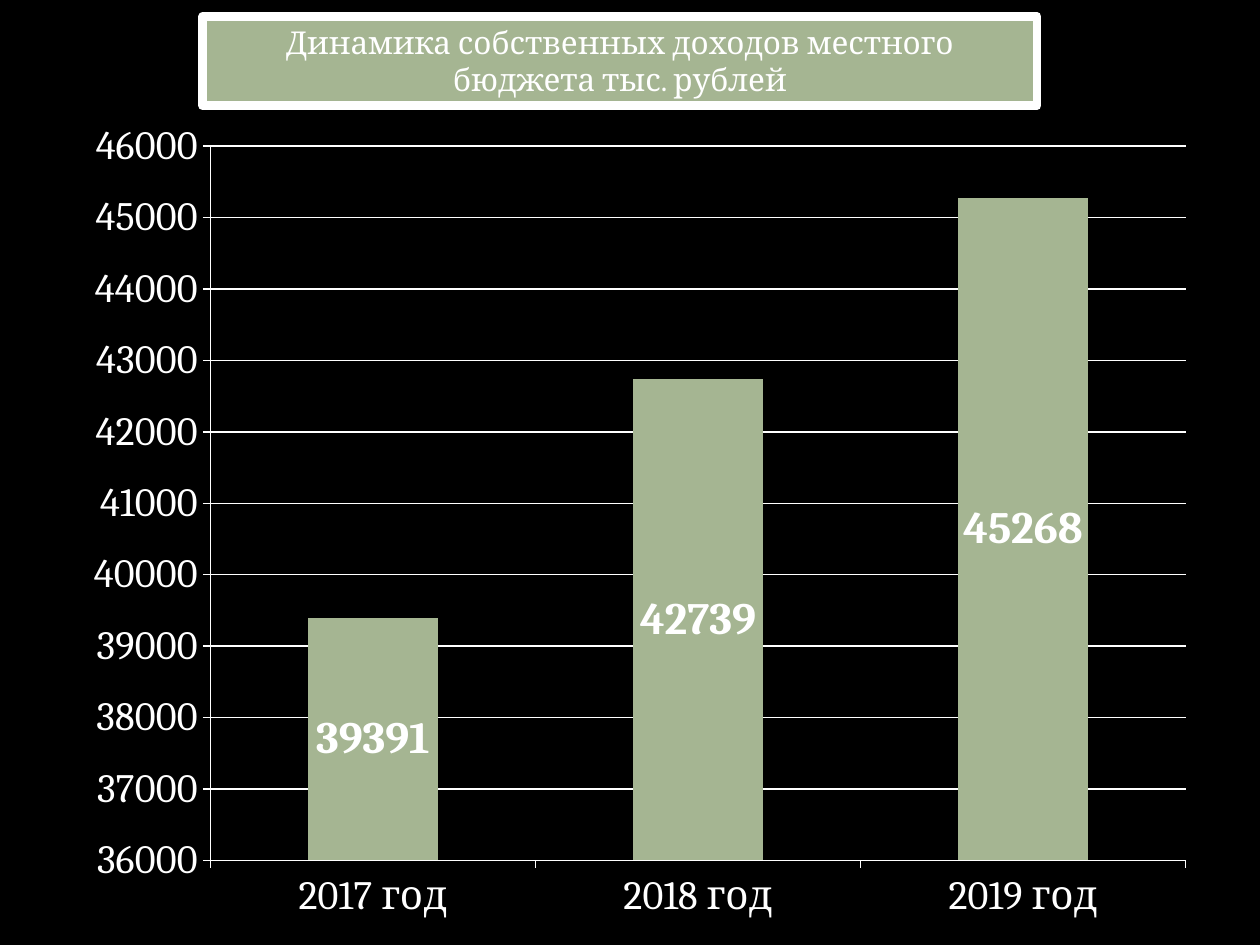
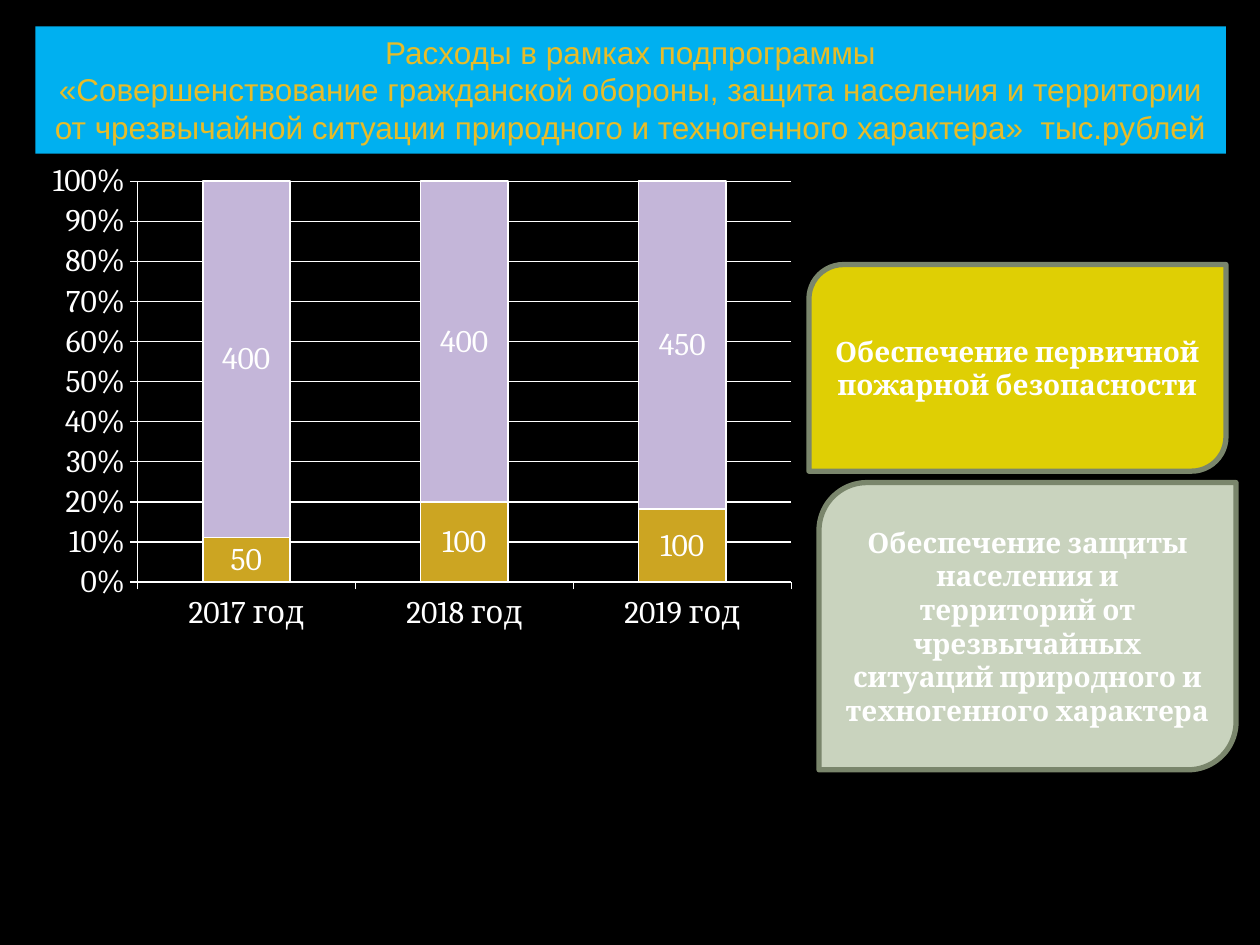
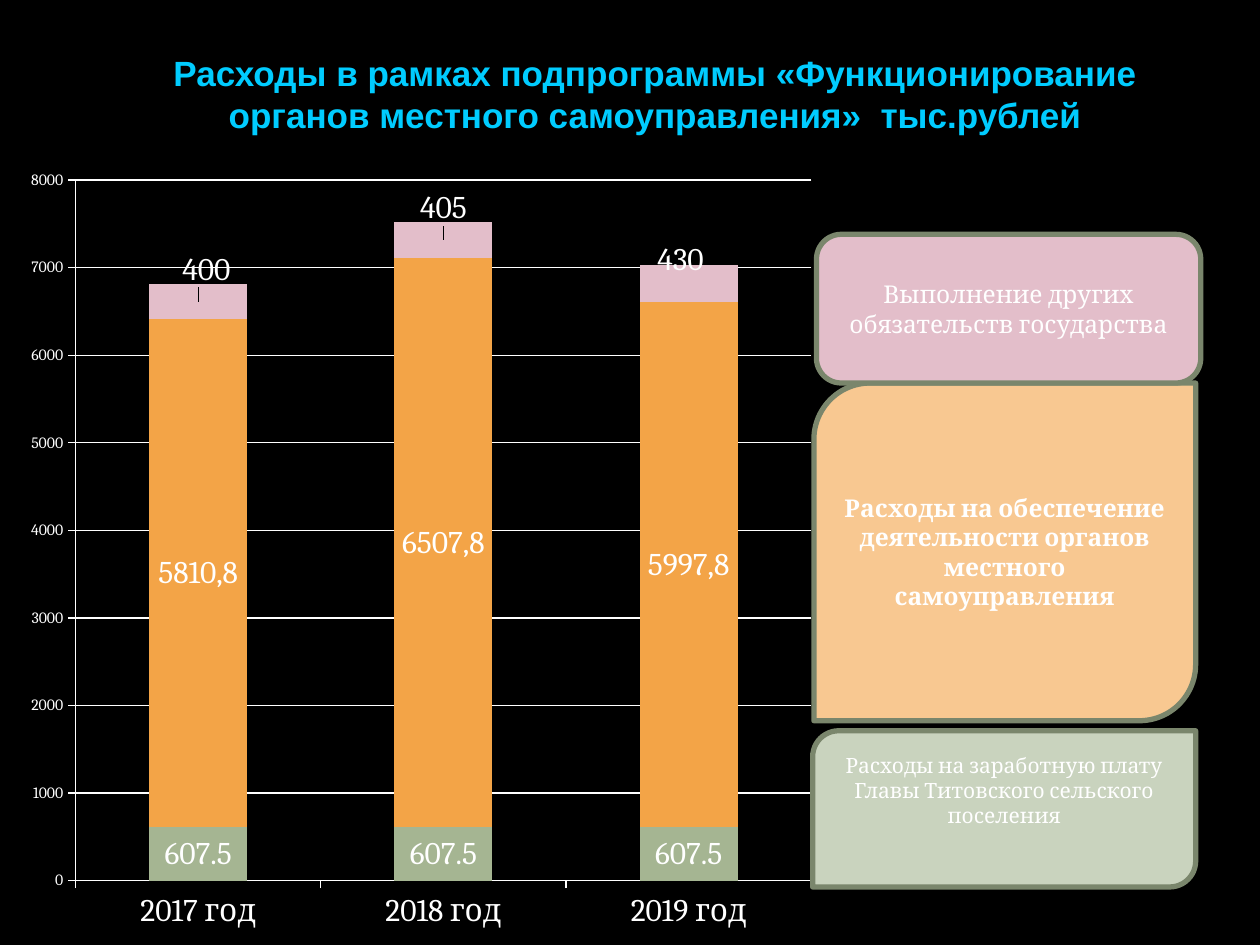
import lxml.etree
import pptx
import pptx.chart.data
import pptx.dml.color
import pptx.enum.chart
import pptx.enum.shapes
import pptx.enum.text
import pptx.oxml.ns
import pptx.util

COLORS = {
    "black": "000000", "white": "FFFFFF", "sage": "A5B592", "pale_sage": "C9D3BE",
    "frame": "7A866C", "blue": "00B0F0", "cyan": "00CCFF", "amber": "E7BC29",
    "gold": "CCA522", "lilac": "C4B6D9", "yellow": "DFCF04", "orange": "F3A447",
    "peach": "F8C891", "pink": "E3BECA",
}
# The slide is a grid of 100 columns by 75 rows; every box is left, top, width, height.
COLUMNS, ROWS = 100, 75
CELL = pptx.util.Inches(0.1)
YEARS = ["2017 год", "2018 год", "2019 год"]
SHAPES = pptx.enum.shapes.MSO_SHAPE
CHARTS = pptx.enum.chart.XL_CHART_TYPE

SLIDES = [
    {
        "title": {
            "box": (16.1, 1.3, 66.2, 7.1), "fill": "sage", "line": "white", "line_width": 5,
            "lines": ["Динамика собственных доходов местного бюджета тыс. рублей"],
            "font": {"name": "Cambria", "size": 18, "color": "white"},
        },
        "chart": {
            "type": CHARTS.COLUMN_STACKED,
            "box": (5.7, 8.4, 90.2, 66.1), "plot": (16.7, 11.6, 77.4, 56.7),
            "size": 23, "axis_size": 23, "label_size": 25.6, "label_bold": True,
            "scale": {"minimum_scale": 36000, "maximum_scale": 46000, "major_unit": 1000},
            "number_format": "0",
            "series": [{"values": [39391, 42739, 45268], "color": "sage"}],
        },
        "panels": [],
    },
    {
        "title": {
            "box": (2.8, 2.1, 94.5, 10.1), "fill": "blue",
            "lines": [
                "Расходы в рамках подпрограммы",
                "«Совершенствование гражданской обороны, защита населения и территории "
                "от чрезвычайной ситуации природного и техногенного характера»  тыс.рублей",
            ],
            "font": {"name": "Arial", "size": 18, "color": "amber"},
        },
        "chart": {
            "type": CHARTS.COLUMN_STACKED_100,
            "box": (2.1, 12.3, 62.2, 57.5), "plot": (10.9, 14.4, 51.9, 31.8),
            "size": 18, "axis_size": 18, "label_size": 18, "bar_line": "white",
            "scale": {}, "number_format": "0%",
            "series": [
                {"values": [50, 100, 100], "color": "gold"},
                {"values": [400, 400, 450], "color": "lilac"},
            ],
        },
        "panels": [
            {"box": (65, 38.3, 33.1, 22.8), "fill": "pale_sage", "size": 16, "bold": True,
             "text": "Обеспечение защиты населения и территорий от чрезвычайных ситуаций "
                     "природного и техногенного характера"},
            {"box": (64.2, 21, 33.1, 16.4), "fill": "yellow", "size": 16, "bold": True,
             "text": "Обеспечение первичной пожарной безопасности"},
        ],
    },
    {
        "title": {
            "box": (9.1, 3.6, 85.8, 7.7),
            "lines": ["Расходы в рамках подпрограммы «Функционирование органов местного "
                      "самоуправления»  тыс.рублей"],
            "font": {"name": "Arial", "size": 20, "color": "cyan", "bold": True},
        },
        "chart": {
            "type": CHARTS.COLUMN_STACKED,
            "box": (1.2, 12.3, 64.6, 62.7), "plot": (6, 14.3, 58.4, 55.6),
            "size": 18, "axis_size": 9, "label_size": 18,
            "scale": {"minimum_scale": 0, "maximum_scale": 8000, "major_unit": 1000},
            "number_format": "0",
            "series": [
                {"values": [607.5] * 3, "color": "sage"},
                {"values": [5810.8, 6507.8, 5997.8], "color": "orange",
                 "label_texts": ["5810,8", "6507,8", "5997,8"]},
                {"values": [400, 405, 430], "color": "pink",
                 "label_shifts": [(0.01, -0.04), (0, -0.04), (-0.01, -0.03)]},
            ],
        },
        "panels": [
            {"box": (64.6, 30.4, 30.3, 26.8), "fill": "peach", "size": 14, "bold": True,
             "text": "Расходы на обеспечение деятельности органов местного самоуправления"},
            {"box": (64.5, 58, 30.4, 12.4), "fill": "pale_sage", "size": 12,
             "bottom_inset": 3.5,
             "text": "Расходы на заработную плату Главы Титовского сельского поселения"},
            {"box": (64.8, 18.6, 30.5, 11.8), "fill": "pink", "size": 14,
             "shape": SHAPES.ROUNDED_RECTANGLE,
             "text": "Выполнение других обязательств государства"},
        ],
    },
]


def rgb(name):
    return pptx.dml.color.RGBColor.from_string(COLORS[name])


def place(box):
    return [round(length * CELL) for length in box]


def format_font(font, values):
    for key, value in values.items():
        if key == "color":
            font.color.rgb = rgb(value)
        else:
            setattr(font, key, pptx.util.Pt(value) if key == "size" else value)


def paint(item, fill=None, line=None, width=1):
    """Give a shape or a chart format its fill and outline; None means neither."""
    if fill:
        item.fill.solid()
        item.fill.fore_color.rgb = rgb(fill)
    else:
        item.fill.background()
    if line:
        item.line.color.rgb = rgb(line)
        item.line.width = pptx.util.Pt(width)
    else:
        item.line.fill.background()


def write(frame, lines, font):
    frame.word_wrap = True
    for index, text in enumerate(lines):
        paragraph = frame.add_paragraph() if index else frame.paragraphs[0]
        paragraph.alignment = pptx.enum.text.PP_ALIGN.CENTER
        run = paragraph.add_run()
        run.text = text
        format_font(run.font, font)


def add_title(slide, title):
    if "fill" in title:
        shape = slide.shapes.add_shape(SHAPES.RECTANGLE, *place(title["box"]))
        shape.shadow.inherit = False
        paint(shape, title["fill"], title.get("line"), title.get("line_width", 1))
    else:
        shape = slide.shapes.add_textbox(*place(title["box"]))
    shape.text_frame.vertical_anchor = pptx.enum.text.MSO_ANCHOR.TOP
    write(shape.text_frame, title["lines"], title["font"])


def add_panel(slide, panel):
    kind = panel.get("shape", SHAPES.ROUND_2_DIAG_RECTANGLE)
    shape = slide.shapes.add_shape(kind, *place(panel["box"]))
    shape.shadow.inherit = False
    paint(shape, panel["fill"], "frame", 3)
    frame = shape.text_frame
    frame.vertical_anchor = pptx.enum.text.MSO_ANCHOR.MIDDLE
    if "bottom_inset" in panel:
        frame.margin_bottom = round(panel["bottom_inset"] * CELL)
    write(frame, [panel["text"]], {"name": "Cambria", "size": panel["size"],
                                   "bold": panel.get("bold", False), "color": "white"})


def add_layout(parent, position, values):
    """Insert a manual chart layout made of the given tag and value pairs."""
    tag = pptx.oxml.ns.qn
    for old in parent.findall(tag("c:layout")):
        parent.remove(old)
    layout = lxml.etree.Element(tag("c:layout"))
    manual = lxml.etree.SubElement(layout, tag("c:manualLayout"))
    for name, value in values.items():
        lxml.etree.SubElement(manual, tag("c:" + name)).set("val", str(value))
    parent.insert(position, layout)


def place_plot(chart, box, plot):
    left, top, width, height = box
    add_layout(chart.plots[0]._element.getparent(), 0, {
        "layoutTarget": "inner", "xMode": "edge", "yMode": "edge",
        "x": (plot[0] - left) / width, "y": (plot[1] - top) / height,
        "w": plot[2] / width, "h": plot[3] / height,
    })


def format_axes(chart, content):
    for axis in (chart.category_axis, chart.value_axis):
        axis.major_tick_mark = pptx.enum.chart.XL_TICK_MARK.OUTSIDE
        axis.minor_tick_mark = pptx.enum.chart.XL_TICK_MARK.NONE
        axis.format.line.color.rgb = rgb("white")
    chart.category_axis.has_major_gridlines = False
    value_axis = chart.value_axis
    value_axis.has_major_gridlines = True
    value_axis.major_gridlines.format.line.color.rgb = rgb("white")
    value_axis.tick_labels.number_format = content["number_format"]
    value_axis.tick_labels.number_format_is_linked = False
    value_axis.tick_labels.font.size = pptx.util.Pt(content["axis_size"])
    for key, value in content["scale"].items():
        setattr(value_axis, key, value)


def format_series(series, values, content):
    font = {"name": "Cambria", "size": content["label_size"],
            "bold": content.get("label_bold", False), "color": "white"}
    paint(series.format, values["color"], content.get("bar_line"))
    series.invert_if_negative = False
    series.data_labels.show_value = True
    format_font(series.data_labels.font, font)
    for index, text in enumerate(values.get("label_texts", [])):
        frame = series.points[index].data_label.text_frame
        frame.text = text
        format_font(frame.paragraphs[0].runs[0].font, font)
    shifts = values.get("label_shifts", [])
    for index in range(len(shifts)):
        format_font(series.points[index].data_label.font, font)
    if shifts:
        labels = series._element.xpath("c:dLbls/c:dLbl")
        for label, (x, y) in zip(labels, shifts):
            add_layout(label, 1, {"x": x, "y": y})


def add_chart(slide, content):
    data = pptx.chart.data.CategoryChartData()
    data.categories = YEARS
    for number, series in enumerate(content["series"], 1):
        data.add_series(f"Series {number}", series["values"])
    chart = slide.shapes.add_chart(content["type"], *place(content["box"]), data).chart
    chart.has_title = chart.has_legend = False
    format_font(chart.font, {"name": "Cambria", "size": content["size"], "color": "white"})
    plot = chart.plots[0]
    plot.gap_width, plot.overlap, plot.vary_by_categories = 150, 100, False
    format_axes(chart, content)
    place_plot(chart, content["box"], content["plot"])
    for series, values in zip(plot.series, content["series"]):
        format_series(series, values, content)


def main():
    presentation = pptx.Presentation()
    presentation.slide_width = COLUMNS * CELL
    presentation.slide_height = ROWS * CELL
    background = presentation.slide_master.background.fill
    background.solid()
    background.fore_color.rgb = rgb("black")
    for content in SLIDES:
        slide = presentation.slides.add_slide(presentation.slide_layouts[6])
        add_title(slide, content["title"])
        add_chart(slide, content["chart"])
        for panel in content["panels"]:
            add_panel(slide, panel)
    presentation.save("out.pptx")


if __name__ == "__main__":
    main()
